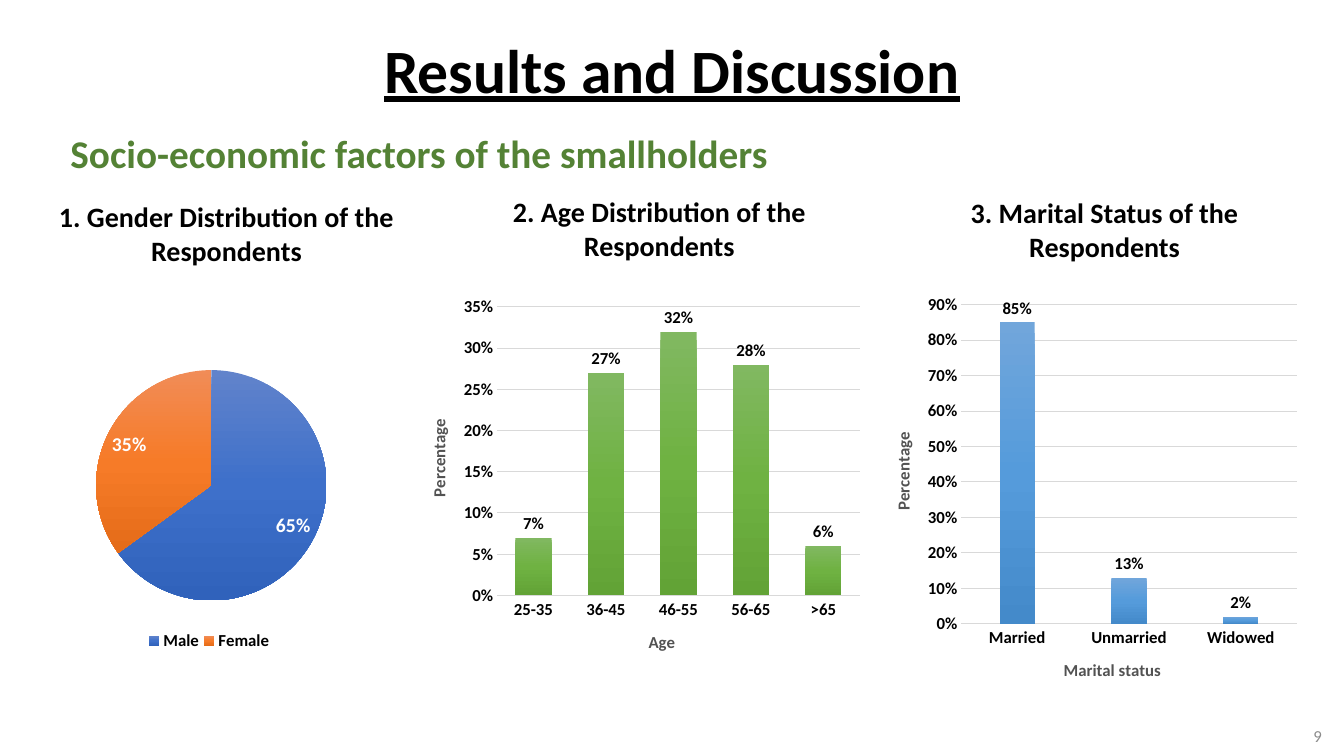
from copy import deepcopy
from lxml import etree
from pptx import Presentation
from pptx.chart.data import CategoryChartData
from pptx.dml.color import RGBColor
from pptx.enum.chart import XL_CHART_TYPE, XL_LABEL_POSITION, XL_LEGEND_POSITION, XL_TICK_MARK
from pptx.enum.text import MSO_ANCHOR, PP_ALIGN
from pptx.oxml.ns import qn
from pptx.util import Inches, Pt

PIE, COLUMN = XL_CHART_TYPE.PIE, XL_CHART_TYPE.COLUMN_CLUSTERED
OUTER, BEST = XL_LABEL_POSITION.OUTSIDE_END, XL_LABEL_POSITION.BEST_FIT
BOTTOM, NO_TICK = XL_LEGEND_POSITION.BOTTOM, XL_TICK_MARK.NONE
MIDDLE, TOP = MSO_ANCHOR.MIDDLE, MSO_ANCHOR.TOP
LEFT, CENTER, RIGHT = PP_ALIGN.LEFT, PP_ALIGN.CENTER, PP_ALIGN.RIGHT

FONT = "Calibri"
HUES = {"black": "000000", "white": "FFFFFF", "green": "548235",
        "gray": "8C8C8C", "axis": "525252", "grid": "D9D9D9"}
FADES = {"male": ("6183CB", "3E70CA", "3062BB"),
         "female": ("F18C57", "F67B28", "E56C19"),
         "age": ("81B861", "6FB242", "62A336"),
         "status": ("71A6DB", "559BDB", "448ACA")}


def put(item, **values):
    for name, value in values.items():
        setattr(item, name, value)


def ink(font, size, hue="black", bold=True, line=False):
    put(font, name=FONT, size=Pt(size), bold=bold, underline=line)
    font.color.rgb = RGBColor.from_string(HUES[hue])


def fade(fill, name):
    fill.gradient()
    fill.gradient_angle = 270
    first = fill.gradient_stops[0]._gs
    first.addnext(deepcopy(first))
    for step, (stop, hue) in enumerate(zip(fill.gradient_stops, FADES[name])):
        stop.color.rgb = RGBColor.from_string(hue)
        stop.position = step / 2


def place(node, index, values, inner=False):
    for old in node.findall(qn("c:layout")):
        node.remove(old)
    layout = etree.Element(qn("c:layout"))
    manual = etree.SubElement(layout, qn("c:manualLayout"))
    pairs = [("layoutTarget", "inner")] if inner else []
    pairs += [("xMode", "edge"), ("yMode", "edge")]
    pairs += zip("xywh", values)
    for tag, value in pairs:
        etree.SubElement(manual, qn("c:" + tag)).set("val", str(value))
    node.insert(index, layout)


class Deck:
    def __init__(self):
        self.show = Presentation()
        put(self.show, slide_width=Inches(13.33), slide_height=Inches(7.5))
        self.slide = self.show.slides.add_slide(self.show.slide_layouts[5])

    def box(self, *shares):
        sides = (self.show.slide_width, self.show.slide_height) * 2
        return [int(side * share / 100) for side, share in zip(sides, shares)]

    def label(self, shape, text, size, hue="black", bold=True, line=False,
              align=CENTER, anchor=TOP, space=1.0, indent=None):
        frame = shape.text_frame
        put(frame, word_wrap=True, vertical_anchor=anchor)
        para = frame.paragraphs[0]
        put(para, text=text, alignment=align, line_spacing=space)
        if indent:
            for name, value in zip(("marL", "indent"), indent):
                para._p.get_or_add_pPr().set(name, str(Inches(value)))
        ink(para.runs[0].font, size, hue, bold, line)

    def title(self, shares, text, size, **style):
        shape = self.slide.shapes.title
        put(shape, **dict(zip(("left", "top", "width", "height"), self.box(*shares))))
        self.label(shape, text, size, **style)

    def text(self, shares, text, size, **style):
        self.label(self.slide.shapes.add_textbox(*self.box(*shares)), text, size, **style)

    def chart(self, kind, shares, data, plot, size, hue, pos):
        table = CategoryChartData(number_format="0%" if kind == COLUMN else "General")
        table.categories = data.keys()
        table.add_series("Series 1", data.values())
        chart = self.slide.shapes.add_chart(kind, *self.box(*shares), table).chart
        put(chart, has_title=False, has_legend=False)
        ink(chart.font, 12)
        place(chart._chartSpace.chart.plotArea, 0, plot, True)
        group = chart.plots[0]
        put(group, vary_by_categories=kind == PIE, has_data_labels=True)
        put(group.data_labels, number_format="0%", number_format_is_linked=False,
            show_percentage=kind == PIE, show_value=kind == COLUMN, position=pos)
        ink(group.data_labels.font, size, hue)
        return chart

    def pie(self, shares, data, plot, fades, key):
        chart = self.chart(PIE, shares, data, plot, 14, "white", BEST)
        for spot, name in enumerate(fades):
            fade(chart.plots[0].series[0].points[spot].format.fill, name)
        chart.has_legend = True
        put(chart.legend, position=BOTTOM, include_in_layout=False)
        ink(chart.legend.font, 12)
        place(chart.legend._element, 1, key)

    def bars(self, shares, data, plot, name, title, gap, overlap, peak, step, width):
        chart = self.chart(COLUMN, shares, data, plot, 12, "black", OUTER)
        put(chart.plots[0], gap_width=gap, overlap=overlap)
        fade(chart.plots[0].series[0].format.fill, name)
        cats, vals = chart.category_axis, chart.value_axis
        for axis, label in ((cats, title), (vals, "Percentage")):
            put(axis, major_tick_mark=NO_TICK, minor_tick_mark=NO_TICK)
            ink(axis.tick_labels.font, 12)
            frame = axis.axis_title.text_frame
            frame.text = label
            ink(frame.paragraphs[0].runs[0].font, 12, "axis")
        put(vals, minimum_scale=0, maximum_scale=peak, major_unit=step,
            has_major_gridlines=True)
        put(vals.tick_labels, number_format="0%", number_format_is_linked=False)
        vals.format.line.fill.background()
        for line, weight in ((cats.format.line, width),
                             (vals.major_gridlines.format.line, 0.75)):
            line.width = Pt(weight)
            line.color.rgb = RGBColor.from_string(HUES["grid"])


def main():
    deck = Deck()
    deck.title((6.9, 0, 86.25, 19.33), "Results and Discussion", 44,
               line=True, anchor=MIDDLE, space=0.9)
    deck.text((76.6, 94.67, 22.5, 5.33), "9", 12, hue="gray", bold=False,
              align=RIGHT, anchor=MIDDLE)
    deck.text((3.08, 17.2, 58, 9.33), "Socio-economic factors of the smallholders", 28,
              hue="green", align=LEFT, space=0.9, indent=(0.25, -0.06))
    heads = (("1. Gender Distribution", 3.08, 25.73, 27.53),
             ("2. Age Distribution", 35.63, 25.07, 26.86),
             ("3. Marital Status", 67.6, 25.2, 29.18))
    for topic, left, top, width in heads:
        deck.text((left, top, width, 10.27), f"{topic} of the Respondents", 20)
    deck.pie((0.08, 36.13, 30.38, 53.47), {"Male": 65, "Female": 35},
             (0.1, 0.24, 0.83, 0.57), ("male", "female"), (0.35, 0.87, 0.32, 0.08))
    deck.bars((30.08, 38.53, 34.58, 51.6),
              {"25-35": 0.07, "36-45": 0.27, "46-55": 0.32, "56-65": 0.28, ">65": 0.06},
              (0.2, 0.04, 0.78, 0.74), "age", "Age", 100, -24, 0.35, 0.05, 1)
    deck.bars((64, 37.6, 34.2, 54.13),
              {"Married": 0.85, "Unmarried": 0.13, "Widowed": 0.02},
              (0.22, 0.05, 0.73, 0.78), "status", "Marital status", 219, -27, 0.9, 0.1, 0.75)
    deck.show.save("out.pptx")


if __name__ == "__main__":
    main()
